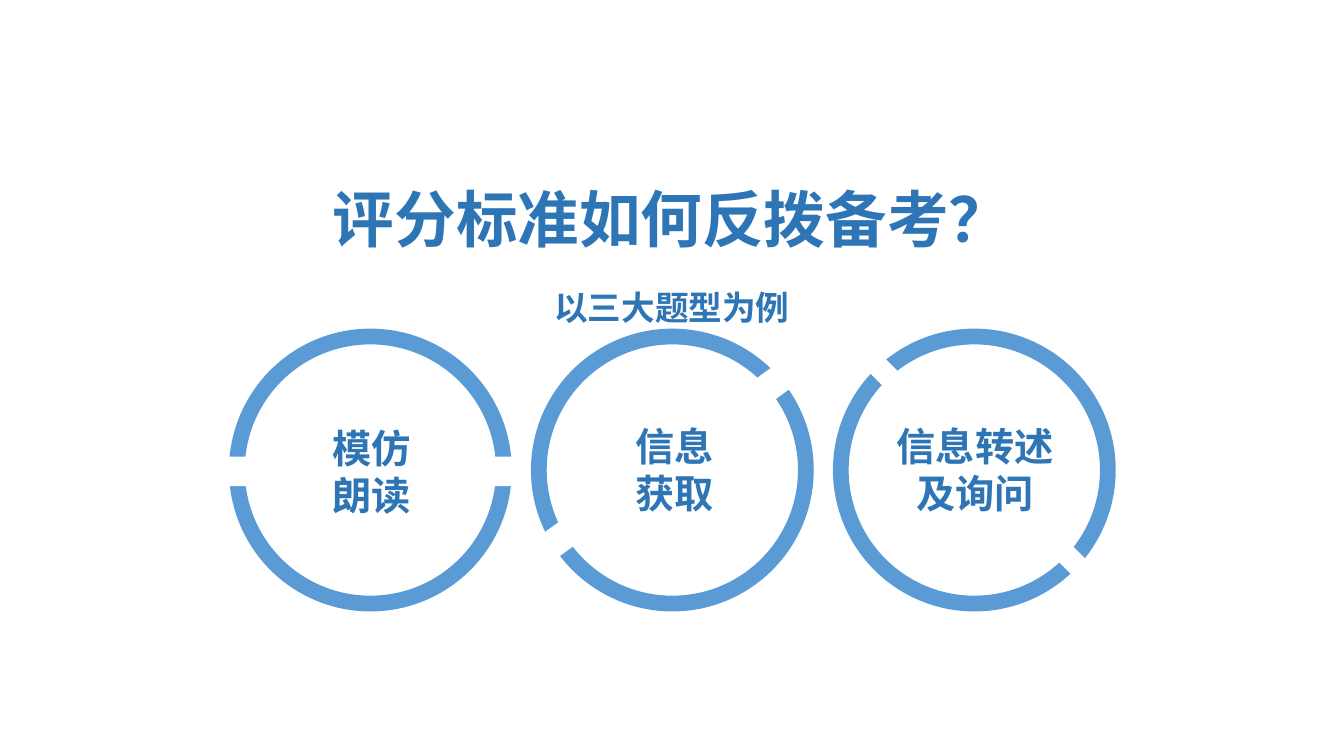
"""Build the slide on how scoring standards shape exam practice."""
import dataclasses

import pptx
import pptx.dml.color
import pptx.enum.shapes
import pptx.enum.text
import pptx.oxml
import pptx.oxml.ns
import pptx.shapes.autoshape
import pptx.slide
import pptx.util

Cm = pptx.util.Cm
FONT = "Noto Sans CJK SC"
INK = "2E75B6"
RIM = "5B9BD5"
WHITE = "FFFFFF"
RING = 6.73
STEP = 7.61
LEFT = 5.97
TOP = 8.48


@dataclasses.dataclass
class Box:
    left: float
    top: float
    width: float
    height: float


@dataclasses.dataclass
class Topic:
    lines: list[str]
    label: Box
    bar: Box
    angle: float


TOPICS = [
    Topic(["模仿", "朗读"], Box(5.84, 10.57, 7.06, 2.64), Box(5.03, 11.51, 8.2, 0.74), 0),
    Topic(["信息", "获取"], Box(13.46, 10.52, 7.06, 2.64), Box(12.42, 11.4, 8.38, 0.71), 324),
    Topic(["信息转述及询问"], Box(21.92, 10.52, 5.31, 2.64), Box(20.35, 11.38, 8.38, 0.53), 45),
]


def color(code: str) -> pptx.dml.color.RGBColor:
    return pptx.dml.color.RGBColor.from_string(code)


def place(box: Box) -> list[pptx.util.Cm]:
    return [Cm(side) for side in dataclasses.astuple(box)]


def add_form(slide: pptx.slide.Slide, kind: pptx.enum.shapes.MSO_SHAPE,
             box: Box) -> pptx.shapes.autoshape.Shape:
    form = slide.shapes.add_shape(kind, *place(box))
    form.shadow.inherit = False
    form.fill.solid()
    form.fill.fore_color.rgb = color(WHITE)
    form.line.fill.background()
    return form


def add_text(slide: pptx.slide.Slide, box: Box, lines: list[str],
             sizes: list[float], space: float = 1.0) -> pptx.shapes.autoshape.Shape:
    shape = slide.shapes.add_textbox(*place(box))
    frame = shape.text_frame
    frame.word_wrap = True
    frame.text = "\n".join(lines)
    for para, size in zip(frame.paragraphs, sizes):
        para.alignment = pptx.enum.text.PP_ALIGN.CENTER
        para.line_spacing = space
        for run in para.runs:
            run.font.size = pptx.util.Pt(size)
            run.font.bold = True
            run.font.color.rgb = color(INK)
            run.font.name = FONT
            asian = pptx.oxml.parse_xml(
                f'<a:ea {pptx.oxml.ns.nsdecls("a")} typeface="{FONT}"/>')
            run.font._element.append(asian)
    return shape


def add_topic(slide: pptx.slide.Slide, order: int, topic: Topic) -> None:
    kinds = pptx.enum.shapes.MSO_SHAPE
    ring = add_form(slide, kinds.OVAL, Box(LEFT + order * STEP, TOP, RING, RING))
    ring.line.color.rgb = color(RIM)
    ring.line.width = pptx.util.Pt(11.25)
    bar = add_form(slide, kinds.RECTANGLE, topic.bar)
    bar.rotation = topic.angle
    label = add_text(slide, topic.label, topic.lines, [28] * len(topic.lines))
    label.text_frame.auto_size = pptx.enum.text.MSO_AUTO_SIZE.SHAPE_TO_FIT_TEXT


def main() -> None:
    deck = pptx.Presentation()
    deck.slide_width = Cm(33.87)
    deck.slide_height = Cm(19.05)
    slide = deck.slides.add_slide(deck.slide_layouts[6])
    title = add_text(slide, Box(7.04, 2.46, 19.79, 5.92),
                     ["评分标准如何反拨备考？", "以三大题型为例"], [44, 24], 1.8)
    title.text_frame.vertical_anchor = pptx.enum.text.MSO_ANCHOR.BOTTOM
    for order, topic in enumerate(TOPICS):
        add_topic(slide, order, topic)
    deck.save("out.pptx")


if __name__ == "__main__":
    main()
